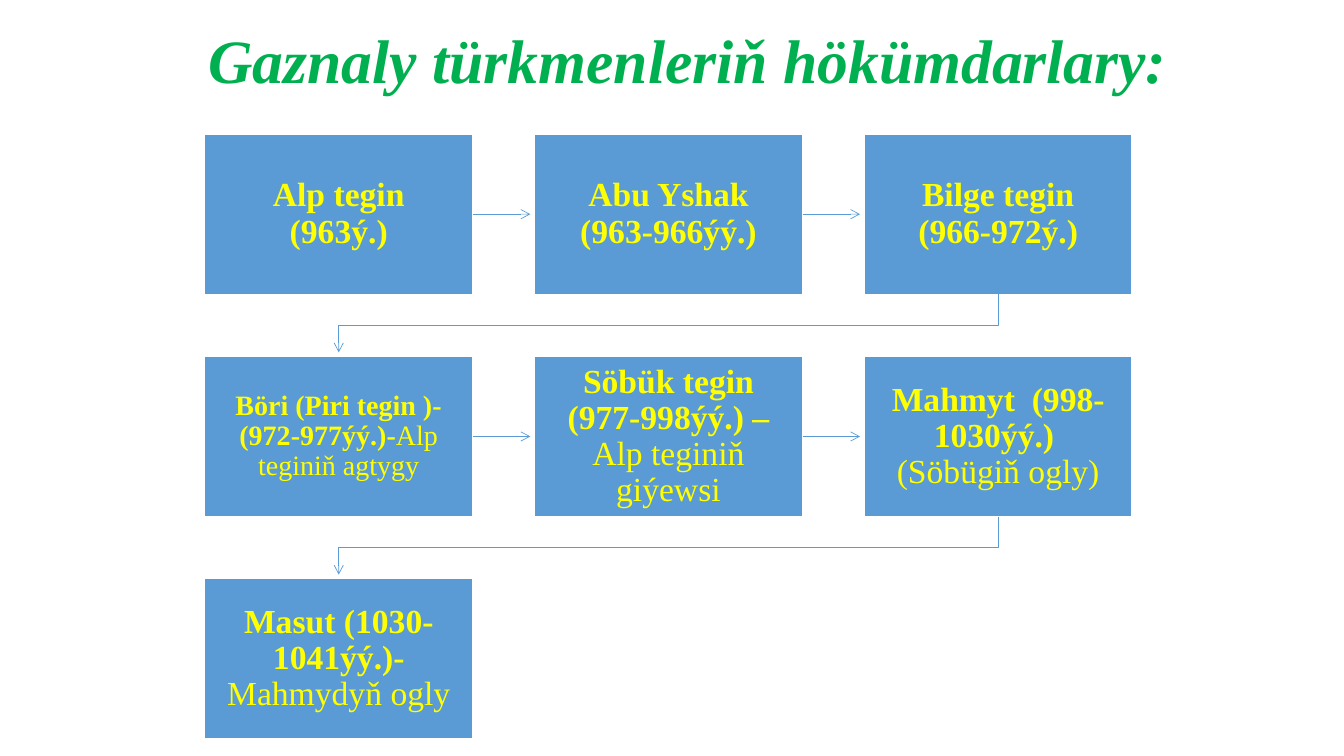
"""Build a slide with the succession of Ghaznavid rulers as a snaking flow."""
from lxml import etree
from pptx import Presentation
from pptx.dml.color import RGBColor
from pptx.enum.shapes import MSO_CONNECTOR, MSO_SHAPE
from pptx.enum.text import MSO_ANCHOR, PP_ALIGN
from pptx.oxml.ns import qn
from pptx.util import Inches, Pt

COLORS = {"title": "00B050", "box": "5B9BD5", "border": "FFFFFF", "text": "FFFF00"}
FONT = "Times New Roman"
COLUMNS = 3
LEFT, TOP = 2.03, 1.33
BOX_W, BOX_H = 2.66, 1.59
STEP_X, STEP_Y = 3.27, 2.205
ARROW_GAP = 0.04

RULERS = [
    ("Alp tegin (963ý.)", "", 24),
    ("Abu Yshak (963-966ýý.)", "", 24),
    ("Bilge tegin (966-972ý.)", "", 24),
    ("Böri (Piri tegin )-(972-977ýý.)-", "Alp teginiň agtygy", 20),
    ("Söbük tegin (977-998ýý.) – ", "Alp teginiň giýewsi", 24),
    ("Mahmyt  (998-1030ýý.)", "  (Söbügiň ogly)", 24),
    ("Masut (1030-1041ýý.)- ", "Mahmydyň ogly", 24),
]


def rgb(name):
    return RGBColor.from_string(COLORS[name])


def write(tf, *texts, size, color, bold=(True, False), italic=False, inset=0.1):
    tf.word_wrap = True
    tf.vertical_anchor = MSO_ANCHOR.MIDDLE
    tf.margin_left = tf.margin_right = Inches(inset)
    tf.margin_top = tf.margin_bottom = Inches(inset)
    p = tf.paragraphs[0]
    p.alignment = PP_ALIGN.CENTER
    p.line_spacing = 0.9
    for text, b in zip(texts, bold):
        if text:
            r = p.add_run()
            r.text = text
            r.font.name = FONT
            r.font.size = Pt(size)
            r.font.bold = b
            r.font.italic = italic
            r.font.color.rgb = rgb(color)


class FlowSlide:
    """Slide and style of the ruler flow."""

    def __init__(self, prs):
        self.shapes = prs.slides.add_slide(prs.slide_layouts[6]).shapes

    def title(self, text):
        box = self.shapes.add_textbox(Inches(0.69), Inches(0.16), Inches(12.27), Inches(0.94))
        write(box.text_frame, text, size=44, color="title", italic=True)

    def box(self, x, y, name, note, size):
        sp = self.shapes.add_shape(
            MSO_SHAPE.RECTANGLE, Inches(x), Inches(y), Inches(BOX_W), Inches(BOX_H))
        sp.shadow.inherit = False
        sp.fill.solid()
        sp.fill.fore_color.rgb = rgb("box")
        sp.line.color.rgb = rgb("border")
        sp.line.width = Pt(1)
        inset = 0.19 if size == 24 else 0.16
        write(sp.text_frame, name, note, size=size, color="text", inset=inset)
        return sp

    def arrow_line(self, sp):
        sp.line.color.rgb = rgb("box")
        sp.line.width = Pt(0.5)
        etree.SubElement(sp.line._get_or_add_ln(), qn("a:tailEnd"), type="arrow")

    def next_arrow(self, a, b):
        y = a.top + a.height // 2
        cx = self.shapes.add_connector(
            MSO_CONNECTOR.STRAIGHT, a.left + a.width, y, b.left - Inches(ARROW_GAP), y)
        cx.begin_connect(a, 3)
        self.arrow_line(cx)
        etree.SubElement(cx._element.spPr, qn("a:effectLst"))

    def wrap_arrow(self, a, b):
        x1, x2 = a.left + a.width // 2, b.left + b.width // 2
        y1, y2 = a.top + a.height, b.top
        mid = (y1 + y2) // 2
        builder = self.shapes.build_freeform(x1, y1)
        builder.add_line_segments(
            [(x1, mid), (x2, mid), (x2, y2 - Inches(ARROW_GAP))], close=False)
        sp = builder.convert_to_shape()
        sp.fill.background()
        sp.shadow.inherit = False
        self.arrow_line(sp)


def main():
    prs = Presentation()
    prs.slide_width, prs.slide_height = Inches(13.33), Inches(7.5)
    s = FlowSlide(prs)
    s.title("Gaznaly türkmenleriň hökümdarlary:")
    boxes = []
    for i, ruler in enumerate(RULERS):
        row, col = divmod(i, COLUMNS)
        boxes.append(s.box(LEFT + col * STEP_X, TOP + row * STEP_Y, *ruler))
    for a, b in zip(boxes, boxes[1:]):
        if a.top == b.top:
            s.next_arrow(a, b)
        else:
            s.wrap_arrow(a, b)
    prs.save("out.pptx")


if __name__ == "__main__":
    main()
